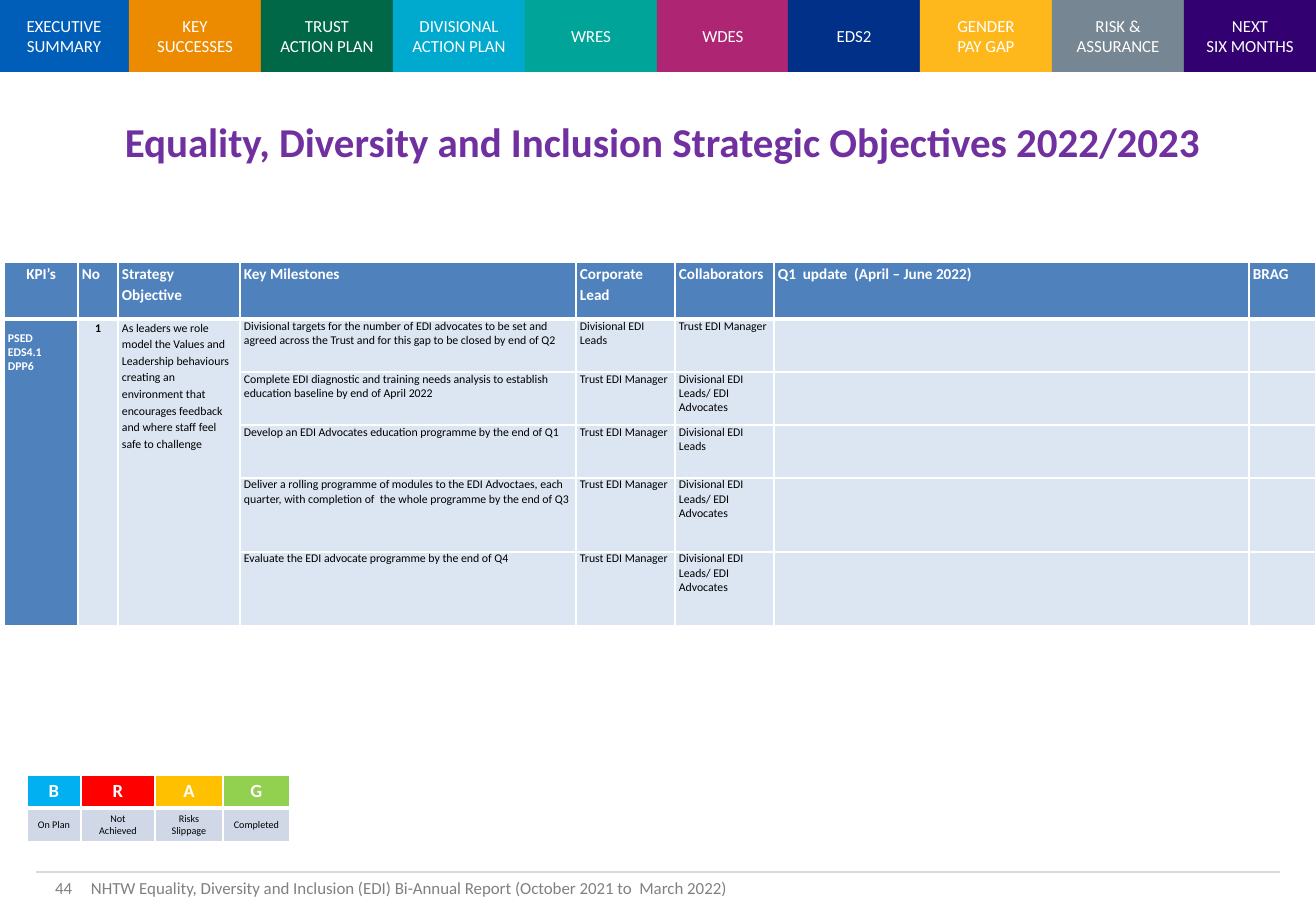
from lxml import etree
from pptx import Presentation
from pptx import util as u
from pptx.dml.color import RGBColor
from pptx.enum import shapes, text
from pptx.oxml import ns

PX = 7526  # EMU per px, 121.5 px to the inch
WHITE = RGBColor(0xFF, 0xFF, 0xFF)
BLACK = RGBColor(0, 0, 0)
GREY = RGBColor(0x80, 0x80, 0x80)
RULE = RGBColor(0xD9, 0xD9, 0xD9)
PURPLE = RGBColor(0x70, 0x30, 0xA0)
BLUE = RGBColor(0x4F, 0x81, 0xBD)
PALE_BLUE = RGBColor(0xDC, 0xE6, 0xF2)
LEGEND_GREY = RGBColor(0xD0, 0xD8, 0xE8)
LEFT, CENTER, RIGHT = text.PP_ALIGN.LEFT, text.PP_ALIGN.CENTER, text.PP_ALIGN.RIGHT
TOP, MIDDLE = text.MSO_ANCHOR.TOP, text.MSO_ANCHOR.MIDDLE


def write(frame, words, size, color, bold=False, align=LEFT, spacing=None):
    frame.word_wrap = True
    frame.text = words
    for para in frame.paragraphs:
        para.alignment = align
        para.line_spacing = spacing
        para.font.name = "Calibri"
        para.font.size = u.Pt(size)
        para.font.bold = bold
        para.font.color.rgb = color


def style_cell(cell, fill, margins, anchor, top=1, bottom=1):
    """Set fill, margins (left/right, top, bottom) and white borders."""
    cell.fill.solid()
    cell.fill.fore_color.rgb = fill
    cell.vertical_anchor = anchor
    side, above, below = margins
    cell.margin_left = cell.margin_right = side * PX
    cell.margin_top, cell.margin_bottom = above * PX, below * PX
    properties = cell._tc.get_or_add_tcPr()
    edges = (("lnL", 1), ("lnR", 1), ("lnT", top), ("lnB", bottom))
    for place, (edge, points) in enumerate(edges):
        line = etree.Element(ns.qn(f"a:{edge}"), w=str(u.Pt(points)))
        solid = etree.SubElement(line, ns.qn("a:solidFill"))
        etree.SubElement(solid, ns.qn("a:srgbClr"), val=str(WHITE))
        properties.insert(place, line)


deck = Presentation()
deck.slide_width, deck.slide_height = 1316 * PX, 911 * PX
page = deck.slides.add_slide(deck.slide_layouts[6])

# Footer rule
rule = page.shapes.add_connector(
    shapes.MSO_CONNECTOR.STRAIGHT, 36 * PX, 872 * PX, 1280 * PX, 872 * PX)
rule.line.color.rgb = RULE
rule.line.width = u.Pt(0.75)
etree.SubElement(rule._element.spPr, ns.qn("a:effectLst"))

# Navigation tabs
TABS = [
    ("EXECUTIVE SUMMARY", RGBColor(0x00, 0x5E, 0xB8)),
    ("KEY\nSUCCESSES", RGBColor(0xED, 0x8B, 0x00)),
    ("TRUST\nACTION PLAN", RGBColor(0x00, 0x67, 0x47)),
    ("DIVISIONAL\nACTION PLAN", RGBColor(0x00, 0xA9, 0xCE)),
    ("WRES", RGBColor(0x00, 0xA4, 0x99)),
    ("WDES", RGBColor(0xAE, 0x25, 0x73)),
    ("EDS2", RGBColor(0x00, 0x30, 0x87)),
    ("GENDER\nPAY GAP", RGBColor(0xFF, 0xB8, 0x1C)),
    ("RISK & ASSURANCE", RGBColor(0x76, 0x86, 0x92)),
    ("NEXT\nSIX MONTHS", RGBColor(0x33, 0x00, 0x72)),
]
for index, (label, color) in enumerate(TABS):
    left = index * 1318 // 10 - 2
    tab = page.shapes.add_shape(
        shapes.MSO_SHAPE.RECTANGLE, left * PX, 0, 132 * PX, 72 * PX)
    tab.shadow.inherit = False
    tab.fill.solid()
    tab.fill.fore_color.rgb = color
    tab.line.fill.background()
    tab.text_frame.vertical_anchor = MIDDLE
    write(tab.text_frame, label, 10, WHITE, align=CENTER)

# Title, footer and page number
BOXES = [
    ((66, 102, 1193, 78), "Equality, Diversity and Inclusion Strategic Objectives 2022/2023",
     24.3, PURPLE, True, CENTER, MIDDLE),
    ((79, 872, 1033, 33), "NHTW Equality, Diversity and Inclusion (EDI) Bi-Annual Report "
     "(October 2021 to  March 2022)", 10, GREY, False, LEFT, TOP),
    ((10, 866, 74, 44), "44", 10, GREY, False, RIGHT, MIDDLE),
]
for area, words, size, color, bold, align, anchor in BOXES:
    box = page.shapes.add_textbox(*(length * PX for length in area))
    box.text_frame.vertical_anchor = anchor
    write(box.text_frame, words, size, color, bold, align)

# Objectives table
HEADINGS = ["KPI’s", "No", "Strategy Objective", "Key Milestones", "Corporate Lead",
            "Collaborators", "Q1  update  (April – June 2022)", "BRAG"]
OBJECTIVE = ("As leaders we role model the Values and Leadership behaviours creating an "
             "environment that encourages feedback and where staff feel safe to challenge")
MANAGER, LEADS = "Trust EDI Manager", "Divisional EDI Leads"
ADVOCATES = "Divisional EDI Leads/ EDI Advocates"
MILESTONES = [
    ("Divisional targets for the number of EDI advocates to be set and agreed across the "
     "Trust and for this gap to be closed by end of Q2", LEADS, MANAGER),
    ("Complete EDI diagnostic and training needs analysis to establish education baseline "
     "by end of April 2022", MANAGER, ADVOCATES),
    ("Develop an EDI Advocates education programme by the end of Q1", MANAGER, LEADS),
    ("Deliver a rolling programme of modules to the EDI Advoctaes, each quarter, with "
     "completion of  the whole programme by the end of Q3", MANAGER, ADVOCATES),
    ("Evaluate the EDI advocate programme by the end of Q4", MANAGER, ADVOCATES),
]
objectives = page.shapes.add_table(6, 8, 4 * PX, 262 * PX, 1312 * PX, 364 * PX).table
for column, width in zip(objectives.columns, (74, 40, 122, 336, 99, 99, 475, 67)):
    column.width = width * PX
for row, height in zip(objectives.rows, (57, 53, 53, 53, 74, 74)):
    row.height = height * PX

for col, heading in enumerate(HEADINGS):
    cell = objectives.cell(0, col)
    style_cell(cell, BLUE, (4, 0, 0), TOP, bottom=3)
    write(cell.text_frame, heading, 9, WHITE, True, LEFT if col else CENTER, 1.15)
for row, milestone in enumerate(MILESTONES, start=1):
    for col, words in enumerate(("", "", "", *milestone, "", "")):
        cell = objectives.cell(row, col)
        above = 12 if col == 0 else 0
        style_cell(cell, PALE_BLUE if col else BLUE, (4, above, 0), TOP,
                   top=3 if row == 1 else 1)
        write(cell.text_frame, words, 7, BLACK)

# Cells that span all milestones
SPANS = [("PSED\nEDS4.1\nDPP6", WHITE, True, LEFT, None),
         ("1", BLACK, True, CENTER, 1.15),
         (OBJECTIVE, BLACK, False, LEFT, 1.15)]
for col, (words, color, bold, align, spacing) in enumerate(SPANS):
    cell = objectives.cell(1, col)
    cell.merge(objectives.cell(5, col))
    write(cell.text_frame, words, 7, color, bold, align, spacing)

# BRAG legend
RATINGS = [
    ("B", "On Plan", RGBColor(0x00, 0xB0, 0xF0), 54),
    ("R", "Not Achieved", RGBColor(0xFF, 0x00, 0x00), 74),
    ("A", "Risks Slippage", RGBColor(0xFF, 0xC0, 0x00), 68),
    ("G", "Completed", RGBColor(0x92, 0xD0, 0x50), 67),
]
legend = page.shapes.add_table(2, 4, 27 * PX, 775 * PX, 263 * PX, 67 * PX).table
legend.rows[0].height, legend.rows[1].height = 33 * PX, 34 * PX
for col, (letter, meaning, color, width) in enumerate(RATINGS):
    legend.columns[col].width = width * PX
    head, body = legend.cell(0, col), legend.cell(1, col)
    style_cell(head, color, (10, 4, 4), MIDDLE, bottom=3)
    write(head.text_frame, letter, 11, WHITE, True, CENTER)
    style_cell(body, LEGEND_GREY, (10, 4, 4), MIDDLE, top=3)
    write(body.text_frame, meaning, 6, BLACK, align=CENTER)

deck.save("out.pptx")
